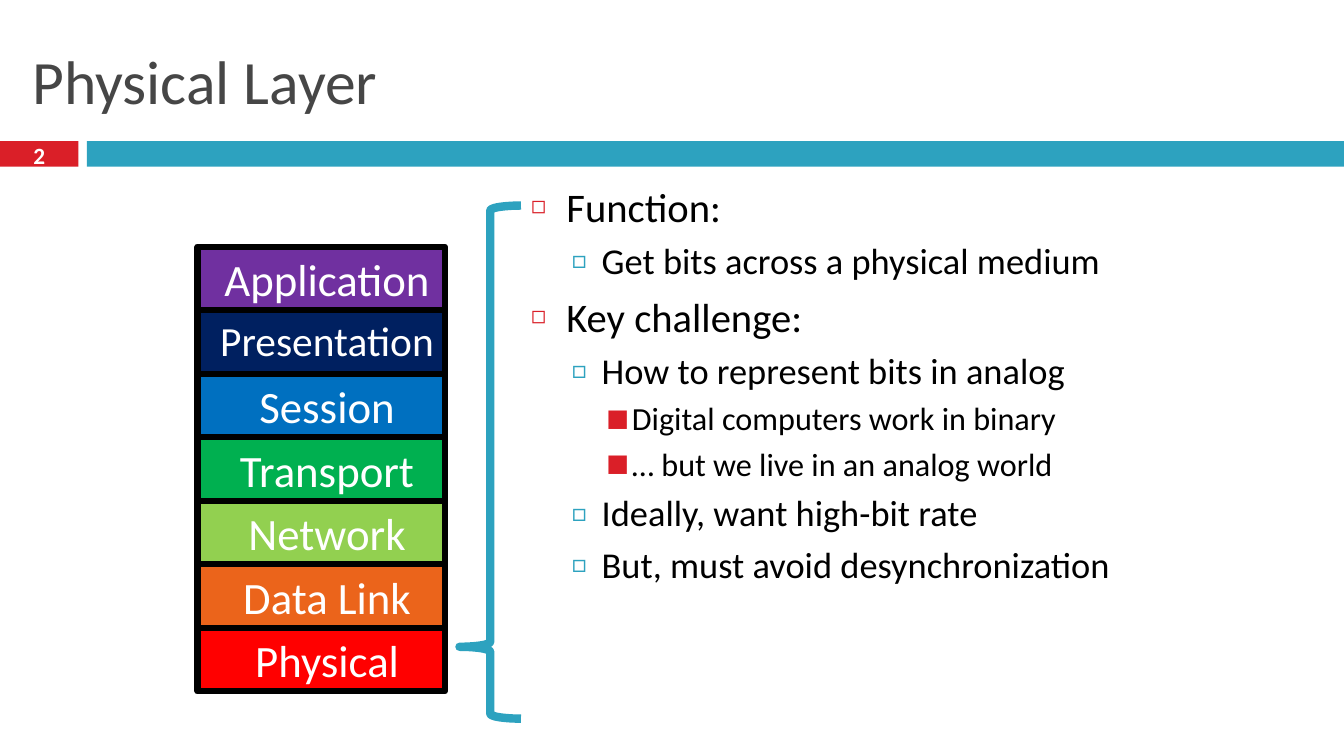
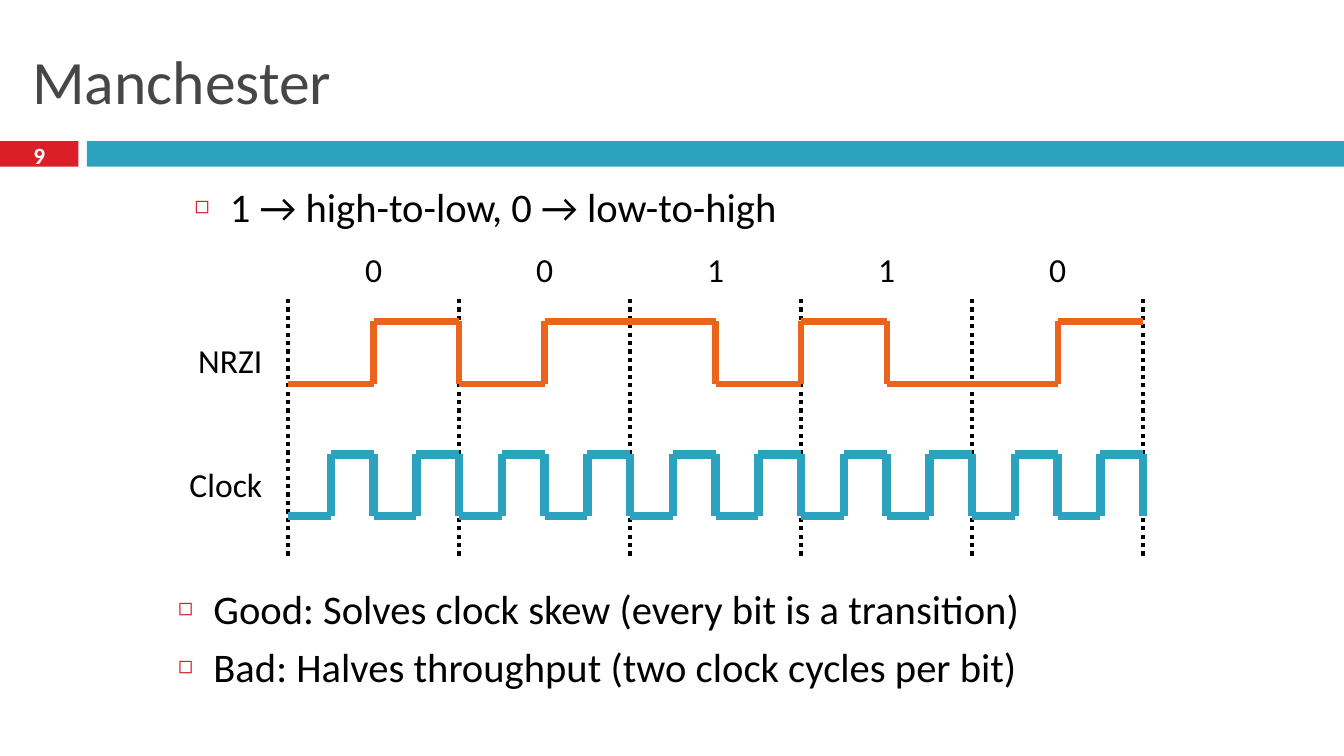
from dataclasses import dataclass
from itertools import pairwise

from lxml import etree
from pptx import Presentation
from pptx.dml.color import RGBColor
from pptx.enum.dml import MSO_LINE
from pptx.enum.shapes import MSO_CONNECTOR, MSO_SHAPE
from pptx.enum.text import MSO_ANCHOR, MSO_AUTO_SIZE, PP_ALIGN
from pptx.oxml.ns import qn
from pptx.util import Cm, Pt

RECT, BRACE = MSO_SHAPE.RECTANGLE, MSO_SHAPE.LEFT_BRACE
STRAIGHT, DOTTED = MSO_CONNECTOR.STRAIGHT, MSO_LINE.ROUND_DOT
LEFT, CENTER, RIGHT = PP_ALIGN.LEFT, PP_ALIGN.CENTER, PP_ALIGN.RIGHT
TOP, MIDDLE = MSO_ANCHOR.TOP, MSO_ANCHOR.MIDDLE
TITLE_AND_CONTENT = 1


@dataclass(frozen=True)
class Theme:
    font: str = "Calibri"
    ink: str = "000000"
    white: str = "FFFFFF"
    heading: str = "464646"
    red: str = "DA1F28"
    teal: str = "2DA2BF"
    orange: str = "EB641B"
    title_size: float = 44
    number_size: float = 16.6
    layer_size: float = 32
    label_size: float = 24
    thick: float = 6
    medium: float = 4.5
    thin: float = 3


@dataclass(frozen=True)
class Box:
    """Left, top, width and height in centimetres."""
    x: float
    y: float
    w: float
    h: float

    def emu(self) -> tuple:
        return Cm(self.x), Cm(self.y), Cm(self.w), Cm(self.h)


@dataclass(frozen=True)
class ListLevel:
    size: float
    indent: float
    hanging: float
    before: float
    bullet: str
    bullet_color: str
    bullet_pct: int


@dataclass(frozen=True)
class Item:
    text: str
    level: int = 0


@dataclass(frozen=True)
class Layer:
    name: str
    color: str
    size: float


@dataclass(frozen=True)
class Wave:
    name: str
    label_y: float
    high: float
    low: float
    color: str
    width: float


T = Theme()
LEVELS = (
    ListLevel(29, 0.89, 0.89, 7, "◻", T.red, 60),
    ListLevel(26, 1.78, 0.76, 5.5, "□", T.teal, 70),
    ListLevel(23, 2.54, 0.64, 5, "■", T.red, 75),
)


# Text helpers
def rgb(color: str) -> RGBColor:
    return RGBColor.from_string(color)


def add_run(p, text: str, size: float, color: str, bold: bool = False) -> None:
    r = p.add_run()
    r.text = text
    r.font.name = T.font
    r.font.size = Pt(size)
    r.font.bold = bold
    r.font.color.rgb = rgb(color)


def set_frame(tf, anchor) -> None:
    tf.word_wrap = True
    tf.auto_size = MSO_AUTO_SIZE.NONE
    tf.vertical_anchor = anchor


def place(sp, box: Box) -> None:
    sp.left, sp.top, sp.width, sp.height = box.emu()


def add_label(slide, box: Box, text: str, size: float, color: str = T.ink,
              align=CENTER, anchor=TOP, bold: bool = False) -> None:
    tf = slide.shapes.add_textbox(*box.emu()).text_frame
    set_frame(tf, anchor)
    p = tf.paragraphs[0]
    p.alignment = align
    add_run(p, text, size, color, bold)


def set_bullet(p, level: ListLevel) -> None:
    p_pr = p._p.get_or_add_pPr()
    p_pr.set("marL", str(Cm(level.indent)))
    p_pr.set("indent", str(-Cm(level.hanging)))
    color = etree.SubElement(p_pr, qn("a:buClr"))
    etree.SubElement(color, qn("a:srgbClr"), val=level.bullet_color)
    etree.SubElement(p_pr, qn("a:buSzPct"), val=str(level.bullet_pct * 1000))
    etree.SubElement(p_pr, qn("a:buFont"), typeface=T.font)
    etree.SubElement(p_pr, qn("a:buChar"), char=level.bullet)


def fill_list(tf, items: list[Item]) -> None:
    set_frame(tf, TOP)
    for i, item in enumerate(items):
        p = tf.add_paragraph() if i else tf.paragraphs[0]
        level = LEVELS[item.level]
        p.level = item.level
        p.alignment = LEFT
        p.space_before = Pt(level.before)
        set_bullet(p, level)
        add_run(p, item.text, level.size, T.ink)


# Shape helpers
def add_rect(slide, box: Box, fill: str, line: str | None = None):
    sp = slide.shapes.add_shape(RECT, *box.emu())
    sp.shadow.inherit = False
    sp.fill.solid()
    sp.fill.fore_color.rgb = rgb(fill)
    if line:
        sp.line.color.rgb = rgb(line)
        sp.line.width = Pt(T.medium)
    else:
        sp.line.fill.background()
    return sp


def add_line(slide, start: tuple[float, float], end: tuple[float, float],
             color: str, width: float, dash=None) -> None:
    ends = [Cm(v) for v in (*start, *end)]
    line = slide.shapes.add_connector(STRAIGHT, *ends)
    line.line.color.rgb = rgb(color)
    line.line.width = Pt(width)
    if dash:
        line.line.dash_style = dash
    etree.SubElement(line._element.spPr, qn("a:effectLst"))


# Shared slide frame: bands, title, slide number and main list
def new_slide(prs, title: str, number: int, body: Box, items: list[Item]):
    slide = prs.slides.add_slide(prs.slide_layouts[TITLE_AND_CONTENT])
    add_rect(slide, Box(0, 3.56, 1.98, 0.64), T.red)
    add_rect(slide, Box(2.19, 3.56, 31.68, 0.64), T.teal)
    add_label(slide, Box(0, 3.48, 1.98, 0.84), str(number), T.number_size,
              T.white, anchor=MIDDLE, bold=True)

    heading = slide.shapes.title
    place(heading, Box(0.56, 0.64, 32.74, 2.74))
    set_frame(heading.text_frame, MIDDLE)
    p = heading.text_frame.paragraphs[0]
    p.alignment = LEFT
    add_run(p, title, T.title_size, T.heading)

    content = slide.placeholders[1]
    place(content, body)
    fill_list(content.text_frame, items)
    return slide


# Layer stack with a brace at the lowest layer
def add_layer(slide, box: Box, layer: Layer) -> None:
    sp = add_rect(slide, box, layer.color, T.ink)
    set_frame(sp.text_frame, TOP)
    p = sp.text_frame.paragraphs[0]
    p.alignment = CENTER
    p._p.get_or_add_pPr().set("marL", str(Cm(0.3)))
    add_run(p, layer.name, layer.size, T.white)


def build_physical_layer(prs) -> None:
    slide = new_slide(prs, "Physical Layer", 2, Box(13.13, 4.45, 16.48, 14.17), [
        Item("Function:"),
        Item("Get bits across a physical medium", 1),
        Item("Key challenge:"),
        Item("How to represent bits in analog", 1),
        Item("Digital computers work in binary", 2),
        Item("… but we live in an analog world", 2),
        Item("Ideally, want high-bit rate", 1),
        Item("But, must avoid desynchronization", 1),
    ])
    layers = (
        Layer("Application", "7030A0", T.layer_size),
        Layer("Presentation", "002060", 29.6),
        Layer("Session", "0070C0", T.layer_size),
        Layer("Transport", "00B050", T.layer_size),
        Layer("Network", "92D050", T.layer_size),
        Layer("Data Link", T.orange, T.layer_size),
        Layer("Physical", "FF0000", T.layer_size),
    )
    height = 1.6
    for i, layer in enumerate(layers):
        add_layer(slide, Box(4.98, 6.22 + i * height, 6.23, height), layer)

    brace = slide.shapes.add_shape(BRACE, *Box(11.58, 5.18, 1.55, 12.93).emu())
    brace.shadow.inherit = False
    brace.fill.background()
    brace.line.color.rgb = rgb(T.teal)
    brace.line.width = Pt(T.thick)
    brace.adjustments[0], brace.adjustments[1] = 0.08, 0.86


# Timing diagram
def add_wave(slide, wave: Wave, levels: list[int], left: float, step: float,
             closing_drop: bool = False) -> None:
    add_label(slide, Box(4.36, wave.label_y, 2.5, 1.27), wave.name,
              T.label_size, align=RIGHT)
    points = []
    for i, level in enumerate(levels):
        y = wave.high if level else wave.low
        points += [(left + i * step, y), (left + (i + 1) * step, y)]
    if closing_drop:
        points.append((points[-1][0], wave.low))
    for start, end in pairwise(points):
        if start != end:
            add_line(slide, start, end, wave.color, wave.width)


def build_manchester(prs) -> None:
    slide = new_slide(prs, "Manchester", 9, Box(4.65, 4.45, 24.56, 1.7), [
        Item("1 → high-to-low, 0 → low-to-high"),
    ])
    bits = (0, 0, 1, 1, 0)
    left, period = 7.26, 4.31
    for i in range(len(bits) + 1):
        x = left + i * period
        add_line(slide, (x, 14), (x, 7.44), T.ink, T.thin, DOTTED)
    for i, bit in enumerate(bits):
        center = left + (i + 0.5) * period
        add_label(slide, Box(center - 0.5, 6.15, 1, 1.27), str(bit), T.label_size)

    nrzi = Wave("NRZI", 8.43, 8.1, 9.68, T.orange, T.medium)
    clock = Wave("Clock", 11.56, 11.45, 13, T.teal, T.thick)
    halves = [half for bit in bits for half in (bit, 1 - bit)]
    add_wave(slide, nrzi, halves, left, period / 2)
    add_wave(slide, clock, [0, 1] * 2 * len(bits), left, period / 4, True)

    verdict = slide.shapes.add_textbox(*Box(4.24, 14.58, 25.4, 3.73).emu())
    fill_list(verdict.text_frame, [
        Item("Good: Solves clock skew (every bit is a transition)"),
        Item("Bad: Halves throughput (two clock cycles per bit)"),
    ])


def main() -> None:
    prs = Presentation()
    prs.slide_width, prs.slide_height = Cm(33.87), Cm(19.05)
    build_physical_layer(prs)
    build_manchester(prs)
    prs.save("out.pptx")


if __name__ == "__main__":
    main()
